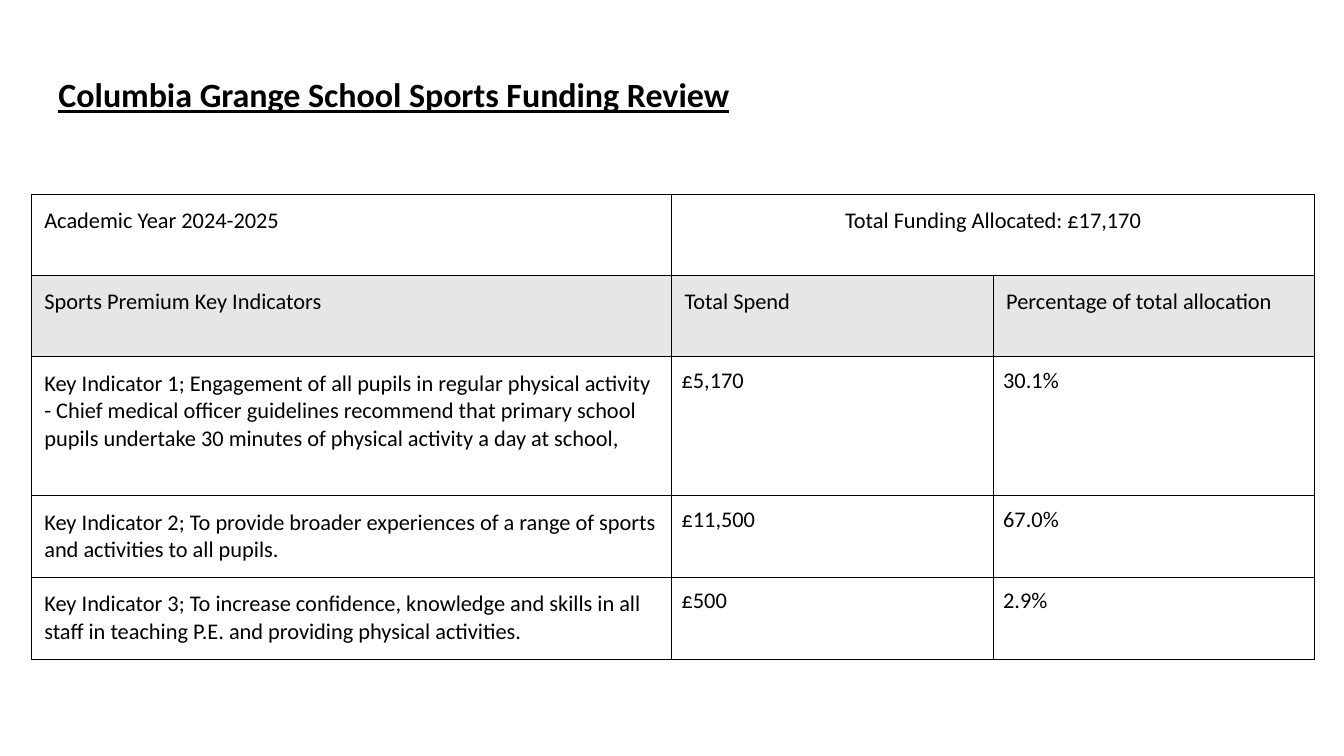
from lxml.etree import SubElement
from pptx import Presentation
from pptx.dml.color import RGBColor
from pptx.enum.text import MSO_ANCHOR as Anchor, MSO_AUTO_SIZE as AutoSize, PP_ALIGN as Align
from pptx.oxml.ns import qn
from pptx.util import Inches, Pt

COLORS = {"ink": "000000", "paper": "FFFFFF", "band": "E7E6E6"}
COLUMNS = [6.35, 3.19, 3.19]
ROWS = [0.8, 0.81, 1.38, 0.81, 0.81]
FUNDING = [
    ["Academic Year 2024-2025", "Total Funding Allocated: £17,170", ""],
    ["Sports Premium Key Indicators", "Total Spend", "Percentage of total allocation"],
    ["Key Indicator 1; Engagement of all pupils in regular physical activity - Chief medical "
     "officer guidelines recommend that primary school pupils undertake 30 minutes of "
     "physical activity a day at school,", "£5,170", "30.1%"],
    ["Key Indicator 2; To provide broader experiences of a range of sports and activities "
     "to all pupils.", "£11,500", "67.0%"],
    ["Key Indicator 3; To increase confidence, knowledge and skills in all staff in teaching "
     "P.E. and providing physical activities.", "£500", "2.9%"],
]


class ReviewPage:
    """Holds the style and the current slide, and adds its elements."""

    font_name = "Calibri"
    wide_inset = 0.13
    narrow_inset = 0.1
    border_width = 0.75

    def __init__(self, deck):
        self.page = deck.slides.add_slide(deck.slide_layouts[5])

    def style_text(self, para, size):
        for span in para.runs:
            span.font.name = self.font_name
            span.font.size = Pt(size)
            span.font.color.rgb = RGBColor.from_string(COLORS["ink"])

    def set_insets(self, holder, inset):
        holder.margin_left = holder.margin_right = Inches(inset)
        holder.margin_top = holder.margin_bottom = Inches(inset)

    def title(self, text, left, top, width, height):
        box = self.page.shapes.title
        box.left, box.top = Inches(left), Inches(top)
        box.width, box.height = Inches(width), Inches(height)
        frame = box.text_frame
        frame.text = text
        frame.word_wrap = True
        frame.auto_size = AutoSize.NONE
        frame.vertical_anchor = Anchor.TOP
        self.set_insets(frame, self.wide_inset)
        para = frame.paragraphs[0]
        para.alignment = Align.LEFT
        para.line_spacing = 0.9
        self.style_text(para, 24.3)
        para.runs[0].font.bold = True
        para.runs[0].font.underline = True

    def border(self, cell):
        properties = cell._tc.get_or_add_tcPr()
        for side in ("a:lnL", "a:lnR", "a:lnT", "a:lnB"):
            line = SubElement(properties, qn(side), w=str(Pt(self.border_width)))
            fill = SubElement(line, qn("a:solidFill"))
            SubElement(fill, qn("a:srgbClr"), val=COLORS["ink"])

    def cell(self, cell, text, inset, color):
        cell.text = text
        cell.vertical_anchor = Anchor.TOP
        self.set_insets(cell, inset)
        self.border(cell)
        cell.fill.solid()
        cell.fill.fore_color.rgb = RGBColor.from_string(COLORS[color])
        self.style_text(cell.text_frame.paragraphs[0], 16)

    def table(self, left, top, widths, heights, values):
        frame = self.page.shapes.add_table(
            len(heights), len(widths), Inches(left), Inches(top),
            Inches(sum(widths)), Inches(sum(heights)))
        table = frame.table
        table.first_row = table.horz_banding = False
        for column, width in zip(table.columns, widths):
            column.width = Inches(width)
        for row, height in zip(table.rows, heights):
            row.height = Inches(height)
        for r, texts in enumerate(values):
            for c, text in enumerate(texts):
                inset = self.narrow_inset if r > 1 and c > 0 else self.wide_inset
                self.cell(table.cell(r, c), text, inset, "band" if r == 1 else "paper")
        total = table.cell(0, 1)
        total.merge(table.cell(0, 2))
        total.text_frame.paragraphs[0].alignment = Align.CENTER


def main():
    deck = Presentation()
    deck.slide_width, deck.slide_height = Inches(13.33), Inches(7.5)
    review = ReviewPage(deck)
    review.title("Columbia Grange School Sports Funding Review", 0.45, 0.65, 12.42, 0.84)
    review.table(0.31, 1.93, COLUMNS, ROWS, FUNDING)
    deck.save("out.pptx")


if __name__ == "__main__":
    main()
